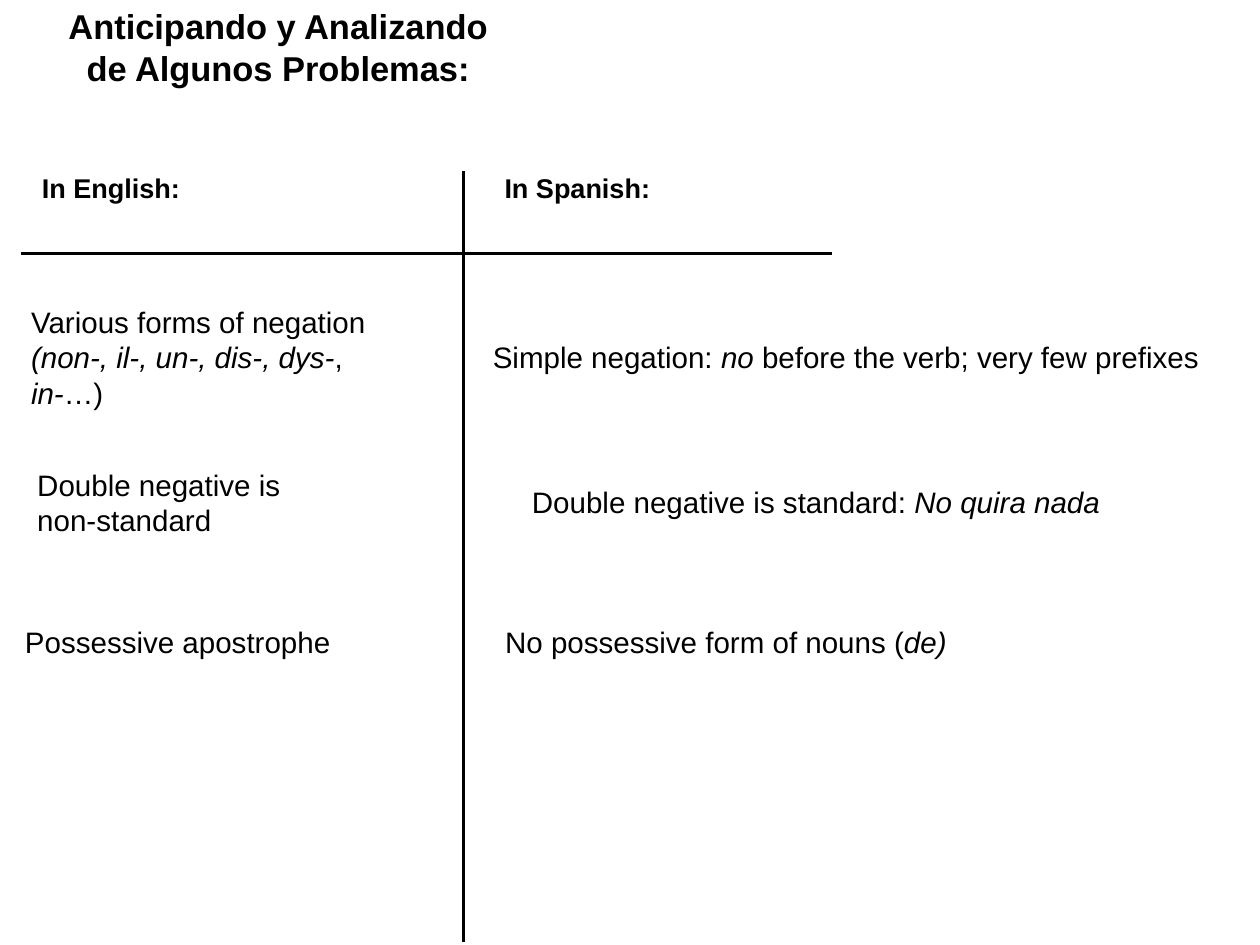
from lxml import etree
from pptx import Presentation
from pptx.dml.color import RGBColor
from pptx.enum import shapes, text
from pptx.oxml.ns import qn
from pptx.util import Pt

BLACK = RGBColor(0, 0, 0)
FONT = "Arial"
INSET = 4.5
TITLE_SIZE, HEADING_SIZE, BODY_SIZE = 28, 22, 24

# italic parts are marked with *
TITLE = (["Anticipando y Analizando", "de Algunos Problemas:"], 51, 350)
HEADINGS = [(["In English:"], 29.5, 127.5), (["In Spanish:"], 405.5, 134)]
HEADINGS_MIDDLE = 152.5
COMPARISONS = [
    (290, (["Various forms of negation", "*(non-, il-, un-, dis-, dys-*,", "*in-*…)"], 20.75, 283),
     (["Simple negation: *no *before the verb; very few prefixes"], 396, 593.5)),
    (408, (["Double negative is", "non-standard"], 25.75, 206.5),
     (["Double negative is standard:* No quira nada*"], 427.75, 479)),
    (521.5, (["Possessive apostrophe"], 15.75, 258.5),
     (["No possessive form of nouns (*de)*"], 406, 368)),
]
RULES = [(16.75, 206, 676, 206), (376.5, 765.5, 376.5, 139)]

deck = Presentation()
deck.slide_width, deck.slide_height = Pt(1024), Pt(768)
slide = deck.slides.add_slide(deck.slide_layouts[6])


def add_entry(entry, middle, size, bold=False, align=text.PP_ALIGN.LEFT):
    lines, left, width = entry
    height = len(lines) * size * 1.2 + 2 * INSET
    box = slide.shapes.add_textbox(Pt(left), Pt(middle - height / 2), Pt(width), Pt(height))
    frame = box.text_frame
    frame.word_wrap = False
    frame.auto_size = text.MSO_AUTO_SIZE.SHAPE_TO_FIT_TEXT
    frame.vertical_anchor = text.MSO_ANCHOR.MIDDLE
    frame.margin_left = frame.margin_right = Pt(INSET)
    frame.margin_top = frame.margin_bottom = Pt(INSET)
    for index, line in enumerate(lines):
        paragraph = frame.add_paragraph() if index else frame.paragraphs[0]
        paragraph.alignment = align
        for part, words in enumerate(line.split("*")):
            if words:
                run = paragraph.add_run()
                run.text = words
                run.font.name, run.font.size = FONT, Pt(size)
                run.font.bold, run.font.italic = bold, part % 2 == 1
                run.font.color.rgb = BLACK


add_entry(TITLE, 38, TITLE_SIZE, True, text.PP_ALIGN.CENTER)

for ends in RULES:
    rule = slide.shapes.add_connector(shapes.MSO_CONNECTOR.STRAIGHT, *map(Pt, ends))
    rule.line.color.rgb = BLACK
    rule.line.width = Pt(2)
    etree.SubElement(rule._element.spPr, qn("a:effectLst"))

for heading in HEADINGS:
    add_entry(heading, HEADINGS_MIDDLE, HEADING_SIZE, True)

for middle, english, spanish in COMPARISONS:
    add_entry(english, middle, BODY_SIZE)
    add_entry(spanish, middle, BODY_SIZE)

deck.save("out.pptx")
